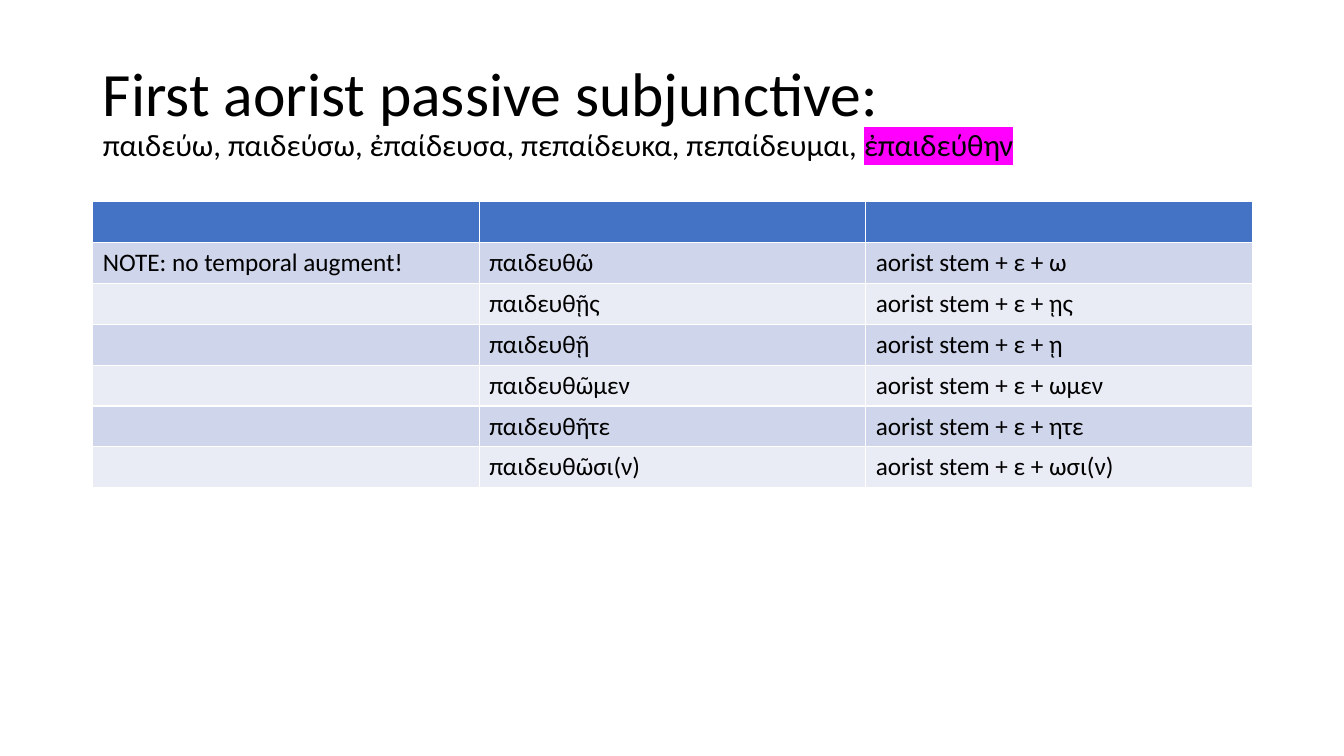
"""Build a slide on the first aorist passive subjunctive."""
from lxml.etree import SubElement
from pptx import Presentation
from pptx.dml.color import RGBColor
from pptx.enum.text import MSO_ANCHOR, PP_ALIGN
from pptx.oxml.ns import qn
from pptx.util import Inches, Pt

HEADING = "First aorist passive subjunctive:"
PRINCIPAL_PARTS = "παιδεύω, παιδεύσω, ἐπαίδευσα, πεπαίδευκα, πεπαίδευμαι, "
SIXTH_PART = "ἐπαιδεύθην"
NOTE = "NOTE: no temporal augment!"
STEM = "aorist stem + ε + "
FORMS = [
    ("παιδευθῶ", "ω"),
    ("παιδευθῇς", "ῃς"),
    ("παιδευθῇ", "ῃ"),
    ("παιδευθῶμεν", "ωμεν"),
    ("παιδευθῆτε", "ητε"),
    ("παιδευθῶσι(ν)", "ωσι(ν)"),
]
FONT, BLACK, MAGENTA = "Calibri", "000000", "FF00FF"
HEADER_FILL, BAND_FILLS = "4472C4", ("E9EBF5", "CFD5EA")
LEFT, WIDTH = Inches(0.92), Inches(11.5)
TABLE_TOP, TABLE_HEIGHT = Inches(2), Inches(2.84)


def color(value):
    return RGBColor.from_string(value)


def style(paragraph):
    paragraph.font.name = FONT
    paragraph.font.color.rgb = color(BLACK)


def add_run(paragraph, text, size):
    run = paragraph.add_run()
    run.text = text
    run.font.size = Pt(size)
    return run


def highlight(run, value):
    marker = SubElement(run.font._element, qn("a:highlight"))
    SubElement(marker, qn("a:srgbClr")).set("val", value)


def fill_title(title):
    title.left, title.top, title.width, title.height = LEFT, Inches(0.4), WIDTH, Inches(1.45)
    title.text_frame.vertical_anchor = MSO_ANCHOR.MIDDLE
    paragraph = title.text_frame.paragraphs[0]
    paragraph.alignment = PP_ALIGN.LEFT
    paragraph.line_spacing = 0.9
    style(paragraph)
    add_run(paragraph, HEADING, 44)
    paragraph.add_line_break()
    add_run(paragraph, PRINCIPAL_PARTS, 22)
    highlight(add_run(paragraph, SIXTH_PART, 22), MAGENTA)


def add_forms_table(slide):
    rows = [("", "", "")]
    rows += [("" if index else NOTE, form, STEM + ending)
             for index, (form, ending) in enumerate(FORMS)]
    table = slide.shapes.add_table(
        len(rows), len(rows[0]), LEFT, TABLE_TOP, WIDTH, TABLE_HEIGHT).table
    for row_index, row in enumerate(rows):
        for column_index, text in enumerate(row):
            cell = table.cell(row_index, column_index)
            cell.fill.solid()
            cell.fill.fore_color.rgb = color(BAND_FILLS[row_index % 2] if row_index else HEADER_FILL)
            paragraph = cell.text_frame.paragraphs[0]
            style(paragraph)
            if text:
                add_run(paragraph, text, 18)


def main():
    presentation = Presentation()
    presentation.slide_width, presentation.slide_height = Inches(13.33), Inches(7.5)
    slide = presentation.slides.add_slide(presentation.slide_layouts[5])
    fill_title(slide.shapes.title)
    add_forms_table(slide)
    presentation.save("out.pptx")


if __name__ == "__main__":
    main()
